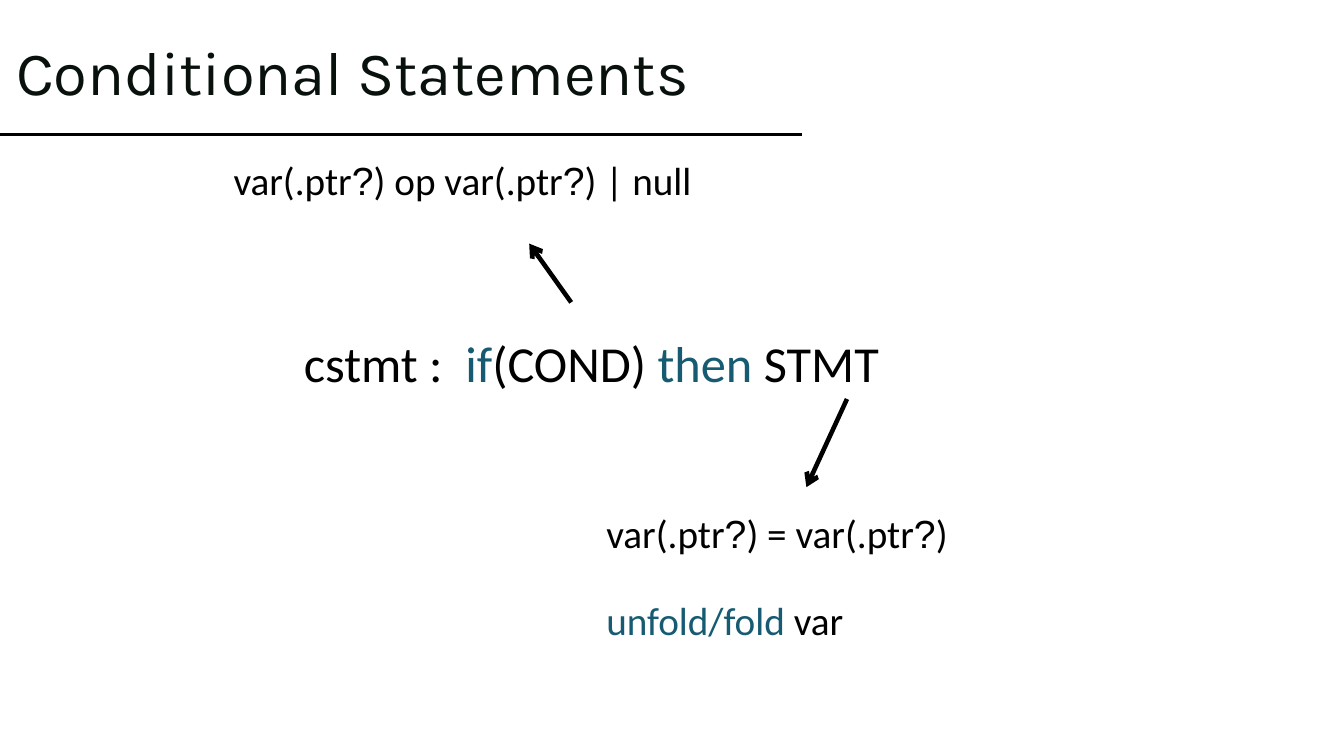
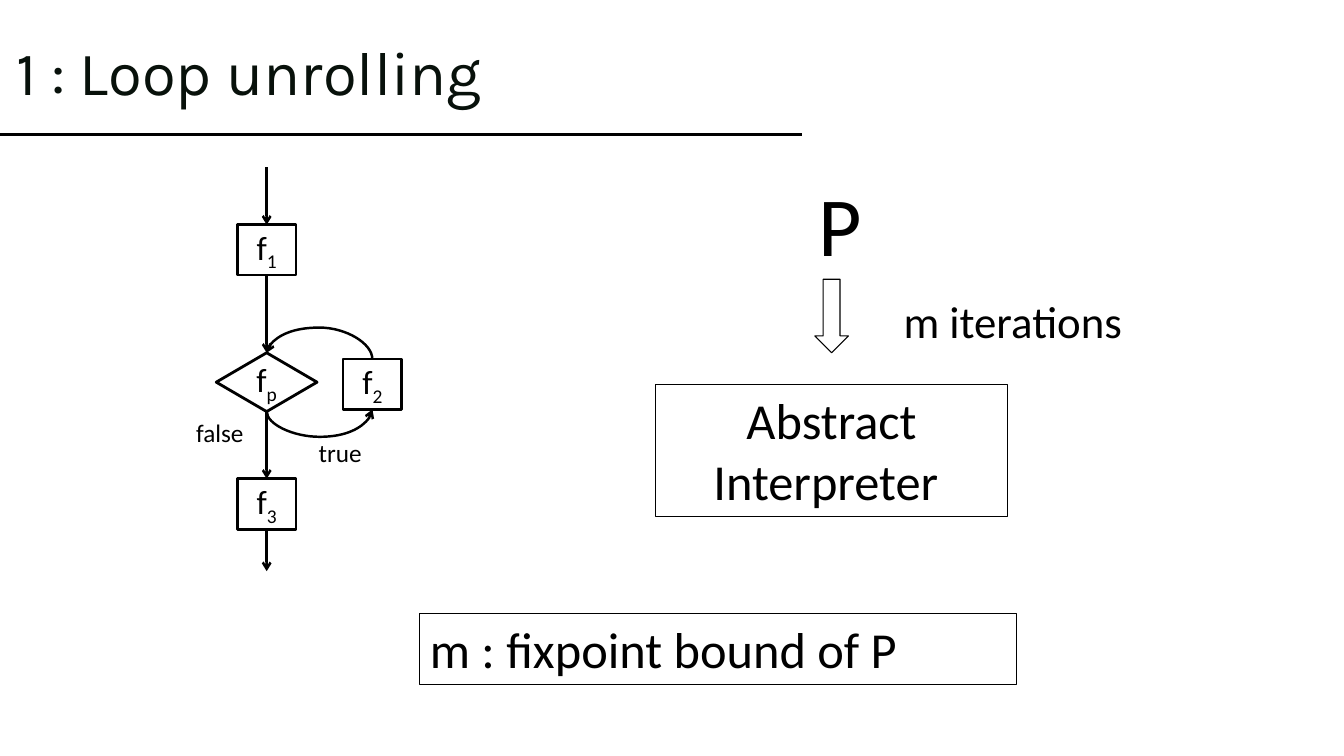
"""Build two slides on conditional statements and loop unrolling."""
from dataclasses import dataclass
from itertools import groupby

from lxml.etree import SubElement as Sub
from pptx import Presentation
from pptx.dml.color import RGBColor as RGB
from pptx.enum.shapes import MSO_CONNECTOR as Link, MSO_SHAPE as Kind
from pptx.enum.text import MSO_ANCHOR as Anchor, PP_ALIGN as Align
from pptx.oxml.ns import qn
from pptx.util import Pt


@dataclass(frozen=True)
class Theme:
    """Hold colours, fonts, type sizes and line widths."""
    ink: RGB = RGB(0x00, 0x00, 0x00)
    blue: RGB = RGB(0x17, 0x5B, 0x73)
    dark: RGB = RGB(0x08, 0x11, 0x0B)
    body: str = "Calibri"
    sign: str = "Arial"
    head: str = "Karla"
    title: int = 44
    huge: int = 60
    large: int = 36
    mid: int = 32
    text: int = 28
    node: int = 24
    small: int = 18
    rule: float = 2.25
    thick: float = 3.25
    frame: float = 2
    flow: float = 1.75
    thin: float = 0.75


@dataclass(frozen=True)
class Bit:
    """Hold one styled piece of text."""
    text: str
    color: RGB = Theme.ink
    font: str = Theme.body
    base: int = 0
    gap: int = 0


def write(par, bits, size):
    """Add bits to a paragraph, with question marks in the sign font."""
    for bit in bits:
        for mark, chars in groupby(bit.text, lambda char: char == "?"):
            run = par.add_run()
            run.text = "".join(chars)
            run.font.size = Pt(size)
            run.font.name = Theme.sign if mark else bit.font
            run.font.color.rgb = bit.color
            props = run.font._element
            if bit.base:
                props.set("baseline", str(bit.base * 1000))
            if bit.gap:
                props.set("spc", str(bit.gap * 100))


def fill(shape, rows, size, align=Align.LEFT, anchor=Anchor.TOP, space=0):
    """Fill a shape with one paragraph per row of bits."""
    frame = shape.text_frame
    frame.word_wrap = True
    frame.vertical_anchor = anchor
    for num, row in enumerate(rows):
        par = frame.add_paragraph() if num else frame.paragraphs[0]
        par.alignment = align
        if num:
            par.space_before = Pt(space)
        write(par, row, size)
    return frame


def label(slide, box, rows, size, **style):
    """Add a text box."""
    shape = slide.shapes.add_textbox(*map(Pt, box))
    return fill(shape, rows, size, **style)


def block(slide, kind, box, width):
    """Add an outlined shape without fill."""
    shape = slide.shapes.add_shape(kind, *map(Pt, box))
    shape.shadow.inherit = False
    shape.fill.background()
    shape.line.color.rgb = Theme.ink
    shape.line.width = Pt(width)
    return shape


def node(slide, kind, mid, size, sub):
    """Add a flow node centred on a point, named f with a subscript."""
    (x, y), (w, h) = mid, size
    shape = block(slide, kind, (x - w / 2, y - h / 2, w, h), Theme.frame)
    bits = [Bit("f"), Bit(sub, base=-25)]
    fill(shape, [bits], Theme.node, Align.CENTER, Anchor.MIDDLE)
    return shape


def line(slide, start, end, width, kind=Link.STRAIGHT, tip=True):
    """Add a line, with an arrowhead if tip is set."""
    link = slide.shapes.add_connector(kind, *map(Pt, (*start, *end)))
    link.line.color.rgb = Theme.ink
    link.line.width = Pt(width)
    if tip:
        Sub(link.line._get_or_add_ln(), qn("a:tailEnd"), type="arrow")
    Sub(link._element.spPr, qn("a:effectLst"))
    return link


def bend(slide, start, end, peak):
    """Add a curved arrow that swings out to the height of peak."""
    (ax, ay), (bx, by) = start, end
    w, h = abs(by - ay), abs(bx - ax)
    left, top = (ax + bx - w) / 2, (ay + by - h) / 2
    link = line(slide, (left, top), (left + w, top + h), Theme.flow, Link.CURVE)
    props = link._element.spPr
    frame = props.find(qn("a:xfrm"))
    frame.set("rot", "5400000")
    frame.set("flipH", "1")
    if bx > ax:
        frame.set("flipV", "1")
    shape = props.find(qn("a:prstGeom"))
    guides = shape.find(qn("a:avLst"))
    if guides is None:
        guides = Sub(shape, qn("a:avLst"))
    ratio = round((ay - peak) / w * 100000)
    Sub(guides, qn("a:gd"), name="adj1", fmla=f"val {ratio}")


def page(deck, title):
    """Add a blank slide with the shared title and rule."""
    slide = deck.slides.add_slide(deck.slide_layouts[6])
    line(slide, (0, 96), (573, 96), Theme.rule, tip=False)
    bits = [Bit(title, Theme.dark, Theme.head)]
    frame = label(slide, (4.5, 2, 541, 104.5), [bits], Theme.title,
                  anchor=Anchor.MIDDLE)
    frame.paragraphs[0].line_spacing = 0.9
    return slide


def grammar(deck):
    """Build the slide on conditional statements."""
    slide = page(deck, "Conditional Statements")
    rule = [Bit("cstmt :"), Bit(" ", gap=8), Bit("if", Theme.blue),
            Bit("(COND) "), Bit("then", Theme.blue), Bit(" STMT")]
    label(slide, (210, 234, 546, 51), [rule], Theme.large)
    label(slide, (126, 108, 415, 63), [[Bit("var(.ptr?) op var(.ptr?) | null ")]],
          Theme.text, align=Align.CENTER)
    forms = [[Bit("var(.ptr?) = var(.ptr?)")],
             [Bit("unfold/fold ", Theme.blue), Bit("var")]]
    label(slide, (426, 360, 361, 104), forms, Theme.text, space=29)
    line(slide, (408, 216), (378, 174), Theme.thick)
    line(slide, (605, 285), (576, 348), Theme.thick)


def chart(slide):
    """Draw the flow chart of the loop."""
    x, side, box = 190.5, 266, (42, 36)
    first = node(slide, Kind.RECTANGLE, (x, 178.5), box, "1")
    node(slide, Kind.RECTANGLE, (side, 274.5), box, "2")
    last = node(slide, Kind.RECTANGLE, (x, 360), box, "3")
    test = node(slide, Kind.DIAMOND, (x, 273), (72, 42), "p")
    flow = [(None, first, 119.5, 160.5), (first, test, 196.5, 252),
            (test, last, 294, 342), (last, None, 378, 408)]
    for above, below, top, foot in flow:
        link = line(slide, (x, top), (x, foot), Theme.flow)
        if above:
            link.begin_connect(above, 2)
        if below:
            link.end_connect(below, 0)
    bend(slide, (side, 256.5), (x, 252), 234)
    bend(slide, (x, 294), (side, 292.5), 312)
    for name, left, top in (("true", 220.5, 309), ("false", 133, 294.5)):
        label(slide, (left, top, 72, 29), [[Bit(name)]], Theme.small)


def loop(deck):
    """Build the slide on loop unrolling."""
    slide = page(deck, "1 : Loop unrolling")
    chart(slide)
    tool = block(slide, Kind.RECTANGLE, (468, 274.5, 252, 94.5), Theme.thin)
    fill(tool, [[Bit("Abstract Interpreter ")]], Theme.large, Align.CENTER)
    label(slide, (474, 119.5, 252, 80), [[Bit("P")]], Theme.huge,
          align=Align.CENTER)
    block(slide, Kind.DOWN_ARROW, (582, 199.5, 24, 52.5), Theme.thin)
    label(slide, (597.5, 206.5, 252, 46), [[Bit("m iterations")]], Theme.mid,
          align=Align.CENTER)
    bound = block(slide, Kind.RECTANGLE, (300, 438, 426, 51), Theme.thin)
    fill(bound, [[Bit("m : fixpoint bound of P")]], Theme.large)


def main():
    """Build and save the deck."""
    deck = Presentation()
    deck.slide_width, deck.slide_height = Pt(960), Pt(540)
    grammar(deck)
    loop(deck)
    deck.save("out.pptx")


if __name__ == "__main__":
    main()
